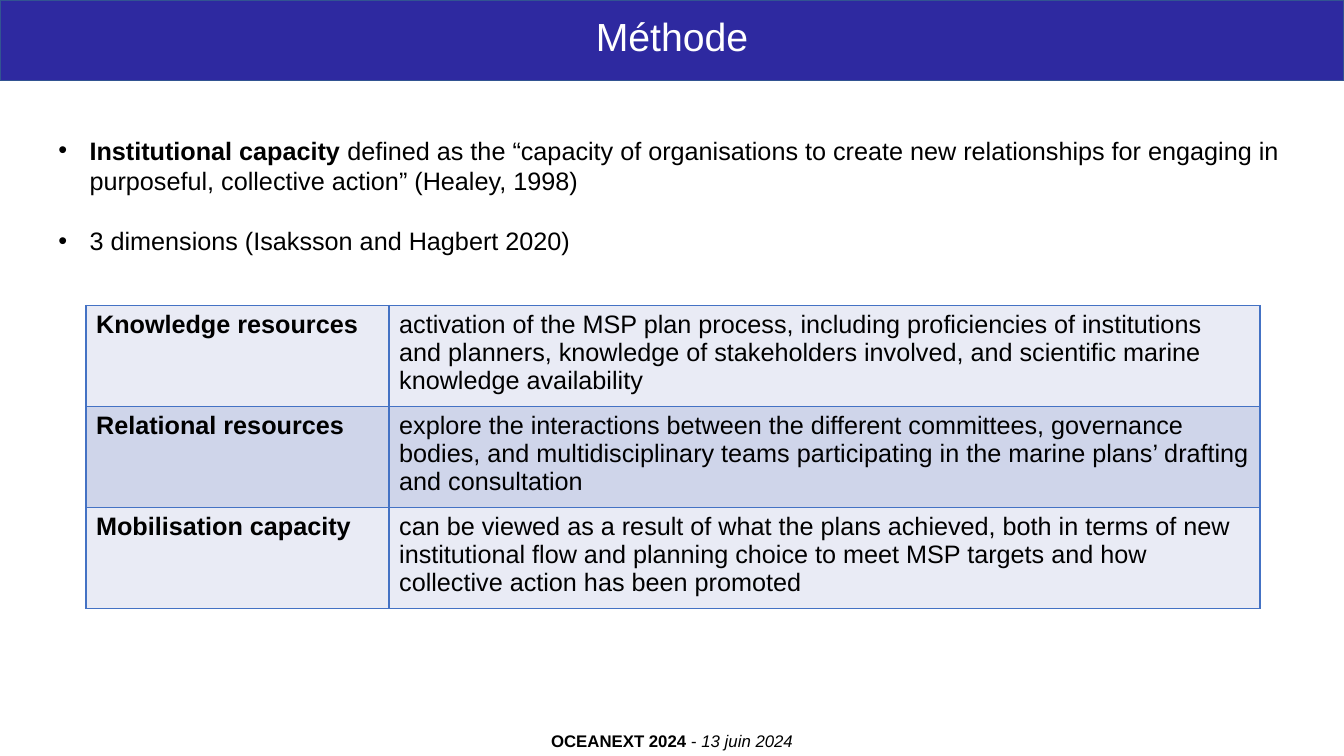
from lxml import etree
from pptx import Presentation, util as u
from pptx.dml.color import RGBColor
from pptx.enum import shapes, text
from pptx.oxml import ns

HUES = {
    "band": "2E29A0", "edge": "325491", "white": "FFFFFF", "ink": "000000",
    "light": "E9EBF5", "dark": "CFD5EA", "rule": "4472C4",
}


class Deck:
    """Holds the style and the current slide; lengths are percent of its size."""

    def __init__(self, font="Arial"):
        self.font = font
        self.prs = Presentation()
        self.prs.slide_width = u.Inches(13.33)
        self.prs.slide_height = u.Inches(7.5)
        self.slide = self.prs.slides.add_slide(self.prs.slide_layouts[6])

    def wide(self, part):
        return int(self.prs.slide_width * part / 100)

    def high(self, part):
        return int(self.prs.slide_height * part / 100)

    def area(self, x, y, w, h):
        return self.wide(x), self.high(y), self.wide(w), self.high(h)

    def hue(self, name):
        return RGBColor.from_string(HUES[name])

    def fill_in(self, para, runs, size, hue="ink"):
        """Add (words, style) runs; a style holds b for bold, i for italic."""
        for words, style in runs:
            run = para.add_run()
            run.text = words
            font = run.font
            font.name, font.size = self.font, u.Pt(size)
            font.bold, font.italic = "b" in style, "i" in style
            font.color.rgb = self.hue(hue)

    def bullet(self, para, indent):
        props = para._p.get_or_add_pPr()
        props.set("marL", str(u.Inches(indent)))
        props.set("indent", str(-u.Inches(indent)))
        etree.SubElement(props, ns.qn("a:buFont")).set("typeface", self.font)
        etree.SubElement(props, ns.qn("a:buChar")).set("char", "•")

    def band(self, *area):
        box = self.slide.shapes.add_shape(shapes.MSO_SHAPE.RECTANGLE, *self.area(*area))
        box.shadow.inherit = False
        box.fill.solid()
        box.fill.fore_color.rgb = self.hue("band")
        box.line.color.rgb = self.hue("edge")
        box.line.width = u.Pt(1)

    def label(self, area, paras, size, hue="ink", mid=True, dots=False, gap=0, lead=None):
        frame = self.slide.shapes.add_textbox(*self.area(*area)).text_frame
        frame.word_wrap = True
        for n, runs in enumerate(paras):
            para = frame.add_paragraph() if n else frame.paragraphs[0]
            if dots:
                self.bullet(para, 0.31)
            if mid:
                para.alignment = text.PP_ALIGN.CENTER
            if lead:
                para.line_spacing = lead
            if n:
                para.space_before = u.Pt(gap)
            self.fill_in(para, runs, size, hue)

    def border(self, cell):
        props = cell._tc.get_or_add_tcPr()
        for n, side in enumerate(("lnL", "lnR", "lnT", "lnB")):
            line = etree.Element(ns.qn("a:" + side), w=str(u.Pt(1)))
            fill = etree.SubElement(line, ns.qn("a:solidFill"))
            etree.SubElement(fill, ns.qn("a:srgbClr")).set("val", HUES["rule"])
            props.insert(n, line)

    def table(self, x, y, cols, row, rows, size):
        area = self.area(x, y, sum(cols), row * len(rows))
        grid = self.slide.shapes.add_table(len(rows), len(cols), *area).table
        grid.first_row = False
        for n, width in enumerate(cols):
            grid.columns[n].width = self.wide(width)
        for r, words in enumerate(rows):
            grid.rows[r].height = self.high(row)
            for c, word in enumerate(words):
                cell = grid.cell(r, c)
                cell.fill.solid()
                cell.fill.fore_color.rgb = self.hue("dark" if r % 2 else "light")
                self.border(cell)
                self.fill_in(cell.text_frame.paragraphs[0], [(word, "" if c else "b")], size)


def main():
    deck = Deck()

    # Footer
    deck.label((14.4, 96, 71.2, 4),
               [[("OCEANEXT 2024 ", "b"), ("- ", ""), ("13 juin 2024", "i")]], 12)

    # Title band
    deck.band(0, 0, 100, 10.67)
    deck.label((6.2, 1.73, 87.6, 7.2), [[("Méthode", "")]], 28, "white", lead=0.9)

    # Definition
    deck.label((3.6, 17.2, 92.4, 17.5), [
        [("Institutional capacity ", "b"),
         ("defined as the “capacity of organisations to create new relationships "
          "for engaging in purposeful, collective action” (Healey, 1998)", "")],
        [("3 dimensions (Isaksson and Hagbert 2020)", "")],
    ], 18, mid=False, dots=True, gap=21.6)

    # Three dimensions
    deck.table(6.4, 40.4, (22.55, 64.8), 13.36, [
        ("Knowledge resources",
         "activation of the MSP plan process, including proficiencies of institutions "
         "and planners, knowledge of stakeholders involved, and scientific marine "
         "knowledge availability"),
        ("Relational resources",
         "explore the interactions between the different committees, governance "
         "bodies, and multidisciplinary teams participating in the marine plans’ "
         "drafting and consultation"),
        ("Mobilisation capacity",
         "can be viewed as a result of what the plans achieved, both in terms of new "
         "institutional flow and planning choice to meet MSP targets and how "
         "collective action has been promoted"),
    ], 18)

    deck.prs.save("out.pptx")


if __name__ == "__main__":
    main()
